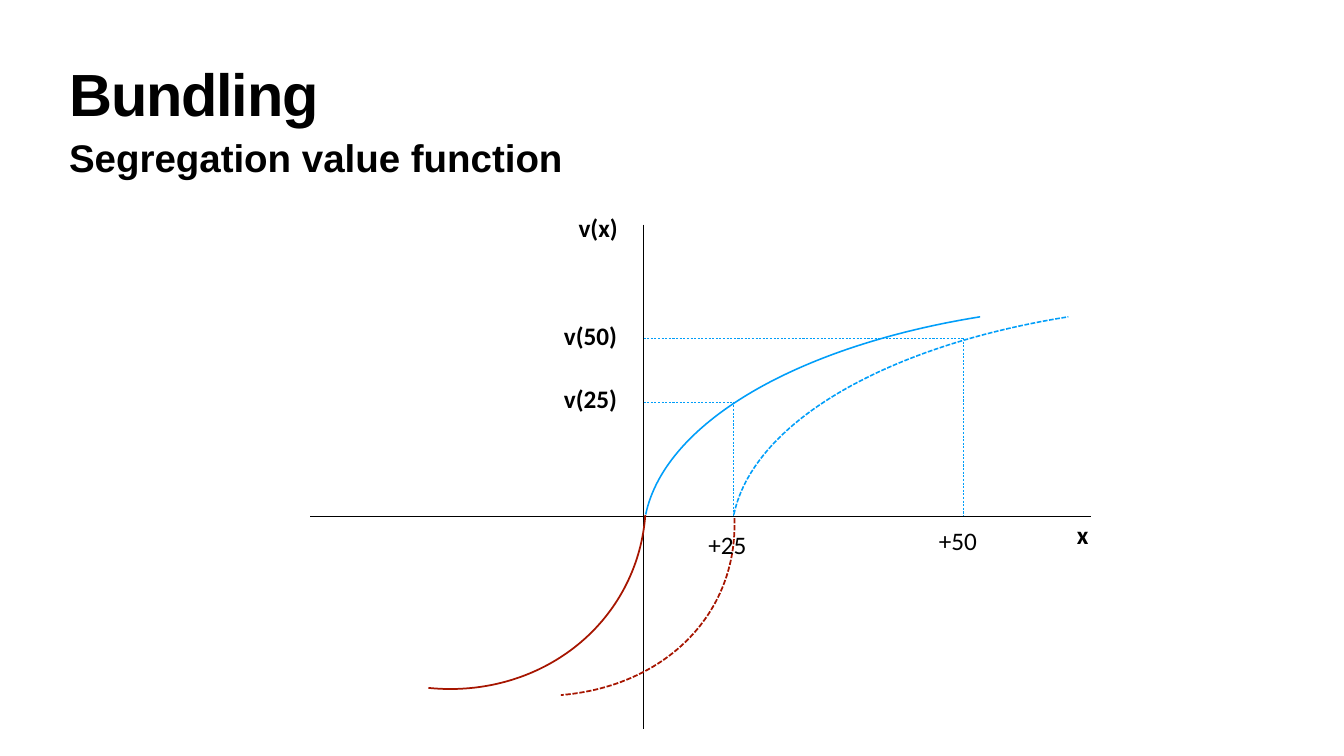
from dataclasses import dataclass

from lxml.etree import SubElement
from pptx import Presentation
from pptx.dml.color import RGBColor
from pptx.enum.dml import MSO_LINE
from pptx.enum.shapes import MSO_CONNECTOR, MSO_SHAPE
from pptx.enum.text import MSO_ANCHOR, MSO_AUTO_SIZE
from pptx.oxml.ns import qn
from pptx.util import Pt


@dataclass(frozen=True)
class Theme:
    ink: RGBColor = RGBColor(0x00, 0x00, 0x00)
    gain: RGBColor = RGBColor(0x00, 0x9E, 0xF9)
    loss: RGBColor = RGBColor(0xA6, 0x15, 0x00)
    heading_font: str = "Arial"
    label_font: str = "Calibri"
    title_size: float = 85
    subtitle_size: float = 55
    label_size: float = 36
    thin: float = 0.75
    gain_width: float = 2.25
    loss_width: float = 2.5


class ValueSlide:
    """Draws styled elements on one slide, with lengths in points."""

    def __init__(self, slide, theme):
        self.slide = slide
        self.theme = theme

    def style_run(self, paragraph, font_name, size, bold):
        run = paragraph.runs[0]
        run.font.name = font_name
        run.font.size = Pt(size)
        run.font.bold = bold
        run.font.color.rgb = self.theme.ink
        return run

    def heading(self, placeholder, text, box, size, inset):
        placeholder.left, placeholder.top, placeholder.width, placeholder.height = map(Pt, box)
        frame = placeholder.text_frame
        frame.text = text
        frame.word_wrap = True
        frame.auto_size = MSO_AUTO_SIZE.NONE
        frame.vertical_anchor = MSO_ANCHOR.MIDDLE
        frame.margin_left = frame.margin_right = Pt(inset)
        frame.margin_top = frame.margin_bottom = Pt(inset)
        paragraph = frame.paragraphs[0]
        paragraph.space_before = Pt(0)
        properties = paragraph._p.get_or_add_pPr()
        properties.set("algn", "l")
        properties.set("marL", "0")
        properties.set("indent", "0")
        SubElement(properties, qn("a:buNone"))
        return self.style_run(paragraph, self.theme.heading_font, size, True)

    def title(self, text):
        placeholder = self.slide.shapes.title
        run = self.heading(placeholder, text, (95, 85, 1730, 113), self.theme.title_size, 4)
        placeholder.text_frame.paragraphs[0].line_spacing = 0.8
        run._r.get_or_add_rPr().set("spc", "-170")

    def subtitle(self, text):
        placeholder = self.slide.placeholders[1]
        self.heading(placeholder, text, (95, 187, 1730, 73.5), self.theme.subtitle_size, 3.6)

    def line(self, start, end, color, dash=None):
        connector = self.slide.shapes.add_connector(
            MSO_CONNECTOR.STRAIGHT, *map(Pt, (*start, *end)))
        connector.line.color.rgb = color
        connector.line.width = Pt(self.theme.thin)
        connector.line.dash_style = dash
        SubElement(connector._element.spPr, qn("a:effectLst"))

    def arc(self, box, rotation, angles, color, width, dash=None):
        shape = self.slide.shapes.add_shape(MSO_SHAPE.ARC, *map(Pt, box))
        shape.adjustments[0], shape.adjustments[1] = angles
        shape.rotation = rotation
        shape.shadow.inherit = False
        shape.fill.background()
        shape.line.color.rgb = color
        shape.line.width = Pt(width)
        shape.line.dash_style = dash

    def label(self, text, left, top, width, bold=True):
        box = self.slide.shapes.add_textbox(*map(Pt, (left, top, width, 51)))
        frame = box.text_frame
        frame.text = text
        frame.word_wrap = not bold
        frame.auto_size = MSO_AUTO_SIZE.SHAPE_TO_FIT_TEXT
        self.style_run(frame.paragraphs[0], self.theme.label_font, self.theme.label_size, bold)


def main():
    presentation = Presentation()
    presentation.slide_width, presentation.slide_height = Pt(1920), Pt(1080)
    slide = presentation.slides.add_slide(presentation.slide_layouts[1])
    theme = Theme()
    canvas = ValueSlide(slide, theme)
    canvas.title("Bundling")
    canvas.subtitle("Segregation value function")

    axis_x, axis_y = 919.4, 737.5
    canvas.line((axis_x, 321), (axis_x, 1041), theme.ink)
    canvas.line((443.5, axis_y), (1558, axis_y), theme.ink)
    for x, y in ((1376.6, 483), (1048, 574)):
        canvas.line((axis_x, y), (x, y), theme.gain, MSO_LINE.DASH)
        canvas.line((x, y), (x, axis_y), theme.gain, MSO_LINE.DASH)

    for left, dash in ((1298.9, None), (1424.9, MSO_LINE.SQUARE_DOT)):
        canvas.arc((left, 54.7, 665.3, 1424.9), 270, (163.564, 194.201),
                   theme.gain, theme.gain_width, dash)
    for box, end_angle, dash in (
        ((347.8, 401.8, 558.7, 598.3), 202.063, None),
        ((436.3, 355, 558.7, 691.2), 190.43, MSO_LINE.SQUARE_DOT),
    ):
        canvas.arc(box, 116.3, (150.284, end_angle), theme.loss, theme.loss_width, dash)

    for text, left, top, width in (
        ("v(x)", 819.4, 299.5, 71.3),
        ("v(50)", 798.5, 453.6, 91.4),
        ("v(25)", 798.5, 544.3, 91.4),
        ("x", 1531.4, 738, 31),
    ):
        canvas.label(text, left, top, width)
    for text, left, top in (("+25", 1005, 752.4), ("+50", 1334.2, 747.4)):
        canvas.label(text, left, top, 90.7, bold=False)

    presentation.save("out.pptx")


if __name__ == "__main__":
    main()
